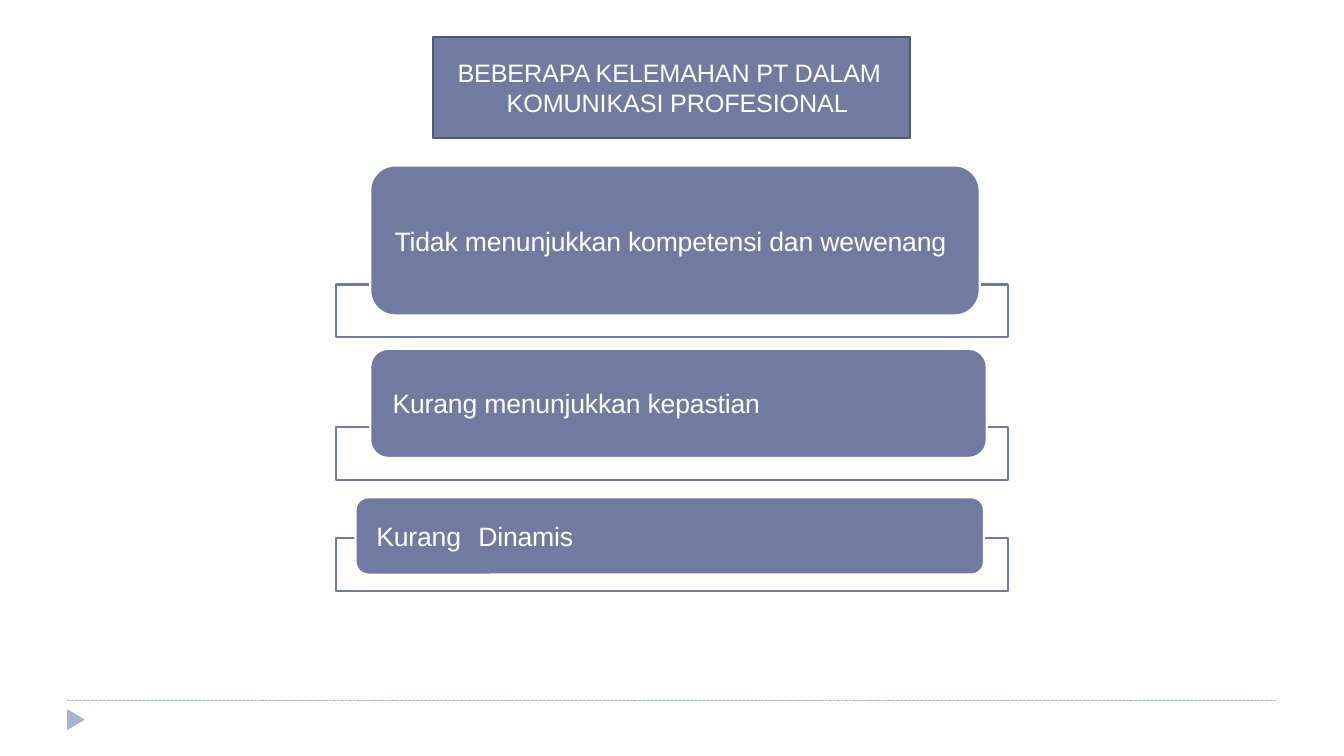
from lxml.etree import SubElement
from pptx import Presentation
from pptx.dml.color import RGBColor
from pptx.enum.dml import MSO_LINE
from pptx.enum.shapes import MSO_CONNECTOR, MSO_SHAPE
from pptx.enum.text import MSO_ANCHOR, MSO_AUTO_SIZE, PP_ALIGN
from pptx.oxml.ns import qn
from pptx.util import Cm, Pt

COLOURS = {"panel": "717BA2", "title_edge": "525877", "text": "FFFFFF", "footer": "9FB8CD"}
FONT = "Arial"
EDGE = Pt(1.56)

# text, left, top, width and height of the rounded panel, top of the frame behind it (cm)
WEAKNESSES = [
    ("Tidak menunjukkan kompetensi dan wewenang", 9.33, 4.17, 15.36, 3.78, 7.17),
    ("Kurang menunjukkan kepastian", 9.33, 8.79, 15.54, 2.75, 10.77),
    ("Kurang\tDinamis", 8.96, 12.53, 15.84, 1.95, 13.56),
]
FRAME_LEFT, FRAME_WIDTH, FRAME_HEIGHT = 8.47, 16.93, 1.33
TAB_STOP = 2.57


def colour(name):
    return RGBColor.from_string(COLOURS[name])


def paint(shape, fill=None, edge=None):
    if fill:
        shape.fill.solid()
        shape.fill.fore_color.rgb = colour(fill)
    else:
        shape.fill.background()
    if edge:
        shape.line.color.rgb = colour(edge)
        shape.line.width = EDGE
    else:
        shape.line.fill.background()


def write(shape, text, size, left_inset, top_inset, anchor):
    frame = shape.text_frame
    frame.text = text
    frame.word_wrap = True
    frame.auto_size = MSO_AUTO_SIZE.NONE
    frame.vertical_anchor = anchor
    frame.margin_left, frame.margin_top = Cm(left_inset), Cm(top_inset)
    frame.margin_right = frame.margin_bottom = 0
    para = frame.paragraphs[0]
    para.alignment = PP_ALIGN.LEFT
    for span in para.runs:
        span.font.name = FONT
        span.font.size = Pt(size)
        span.font.color.rgb = colour("text")
        span._r.get_or_add_rPr().set("spc", "-10")
    return para


def add_title(page, left, top, width, height):
    title = page.shapes.title
    title.left, title.top, title.width, title.height = map(Cm, (left, top, width, height))
    paint(title, "panel", "title_edge")
    para = write(title, "BEBERAPA KELEMAHAN PT DALAM KOMUNIKASI PROFESIONAL",
                 18, 0, 0.5, MSO_ANCHOR.TOP)
    properties = para._p.get_or_add_pPr()
    properties.set("marL", str(Cm(1.85)))
    properties.set("indent", str(Cm(-1.24)))


def add_weakness(page, text, left, top, width, height, frame_top):
    frame = page.shapes.add_shape(MSO_SHAPE.RECTANGLE, Cm(FRAME_LEFT), Cm(frame_top),
                                  Cm(FRAME_WIDTH), Cm(FRAME_HEIGHT))
    panel = page.shapes.add_shape(MSO_SHAPE.ROUNDED_RECTANGLE, Cm(left), Cm(top),
                                  Cm(width), Cm(height))
    frame.shadow.inherit = panel.shadow.inherit = False
    paint(frame, edge="panel")
    paint(panel, "panel", "text")
    para = write(panel, text, 19, 0.43, 0, MSO_ANCHOR.MIDDLE)
    if "\t" in text:
        tabs = SubElement(para._p.get_or_add_pPr(), qn("a:tabLst"))
        SubElement(tabs, qn("a:tab"), pos=str(Cm(TAB_STOP)), algn="l")


def add_footer(page, left, top, width):
    rule = page.shapes.add_connector(MSO_CONNECTOR.STRAIGHT, Cm(left), Cm(top),
                                     Cm(left + width), Cm(top))
    rule.line.color.rgb = colour("footer")
    rule.line.width = Pt(0.72)
    rule.line.dash_style = MSO_LINE.SQUARE_DOT
    SubElement(rule._element.spPr, qn("a:effectLst"))

    marker_top, marker_width, marker_height = top + 0.22, 0.45, 0.53
    builder = page.shapes.build_freeform(Cm(left), Cm(marker_top))
    builder.add_line_segments([
        (Cm(left), Cm(marker_top + marker_height)),
        (Cm(left + marker_width), Cm(marker_top + marker_height / 2)),
    ])
    marker = builder.convert_to_shape()
    marker.shadow.inherit = False
    paint(marker, "footer")


def main():
    deck = Presentation()
    deck.slide_width, deck.slide_height = Cm(33.87), Cm(19.05)
    page = deck.slides.add_slide(deck.slide_layouts[5])
    add_footer(page, 1.69, 17.65, 30.48)
    for weakness in WEAKNESSES:
        add_weakness(page, *weakness)
    add_title(page, 10.92, 0.94, 12.01, 2.54)
    deck.save("out.pptx")


if __name__ == "__main__":
    main()
